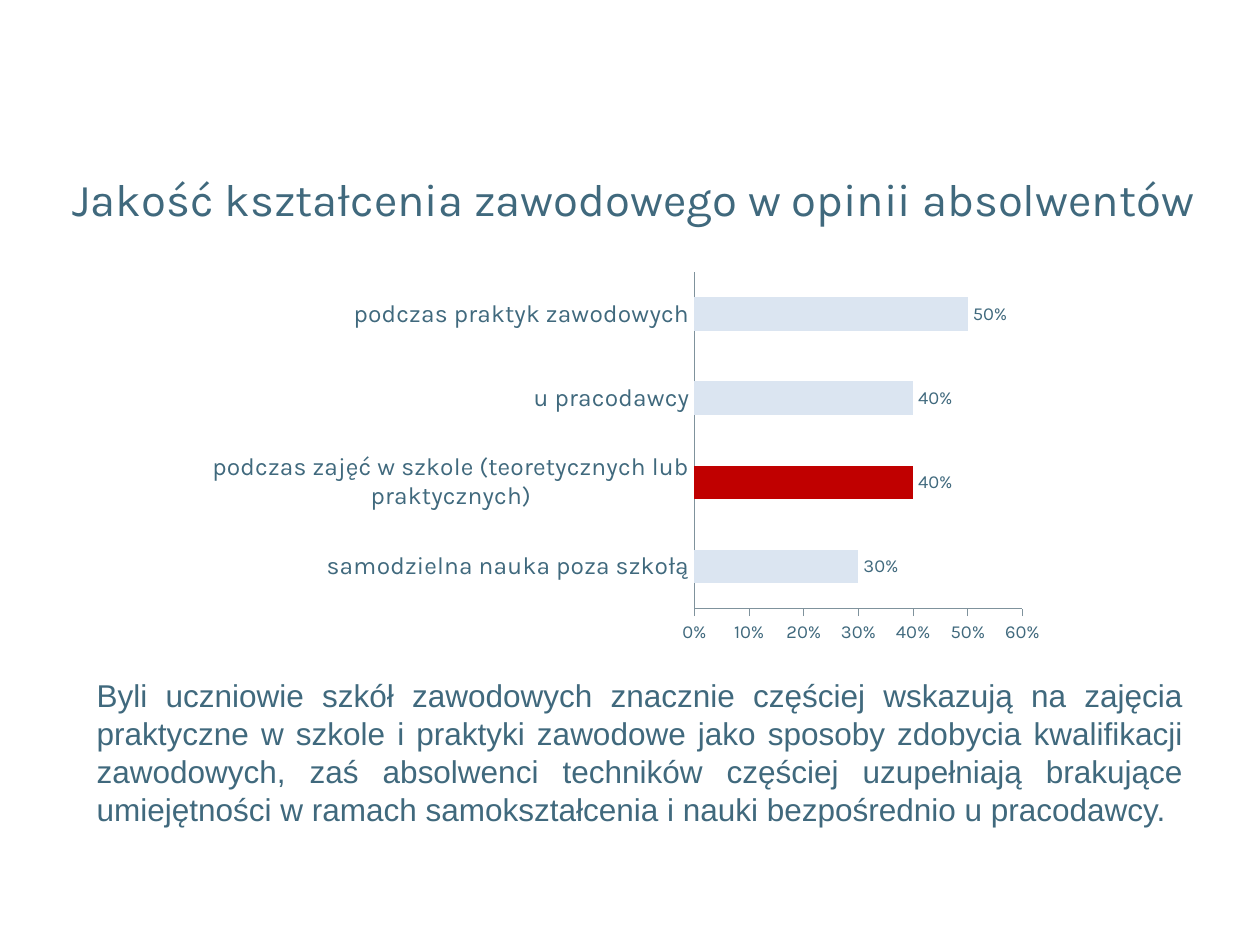
from lxml.etree import fromstring
from pptx import Presentation
from pptx.chart.data import CategoryChartData
from pptx.dml.color import RGBColor
from pptx.enum.chart import XL_CHART_TYPE, XL_LABEL_POSITION, XL_TICK_MARK
from pptx.enum.text import MSO_ANCHOR, MSO_AUTO_SIZE, PP_ALIGN
from pptx.util import Cm, Pt

INK = "40697D"
AXIS = "7F929C"
PALE = "DBE5F1"
RED = "C00000"

HEADING = "Jakość kształcenia zawodowego w opinii absolwentów"
COMMENTARY = (
    "Byli uczniowie szkół zawodowych znacznie częściej wskazują na zajęcia "
    "praktyczne w szkole i praktyki zawodowe jako sposoby zdobycia kwalifikacji "
    "zawodowych, zaś absolwenci techników częściej uzupełniają brakujące "
    "umiejętności w ramach samokształcenia i nauki bezpośrednio u pracodawcy."
)
LEARNING_PLACES = {
    "samodzielna nauka poza szkołą": 0.3,
    "podczas zajęć w szkole (teoretycznych lub praktycznych)": 0.4,
    "u pracodawcy": 0.4,
    "podczas praktyk zawodowych": 0.5,
}
SCHOOL_INDEX = 1
PLOT_AREA = {"x": 0.58, "y": 0.02, "w": 0.38, "h": 0.87}


def colour(value):
    """Turn a hex string into a colour."""
    return RGBColor.from_string(value)


def style_font(font, size, name="Karla", ink=INK):
    """Set size, typeface and colour of a font."""
    font.size = Pt(size)
    font.name = name
    font.bold = False
    font.color.rgb = colour(ink)


def write(frame, text, size, name="Karla", align=PP_ALIGN.LEFT, anchor=MSO_ANCHOR.TOP):
    """Fill a text frame with one formatted paragraph."""
    frame.word_wrap = True
    frame.vertical_anchor = anchor
    paragraph = frame.paragraphs[0]
    paragraph.alignment = align
    run = paragraph.add_run()
    run.text = text
    style_font(run.font, size, name)


def add_heading(slide):
    """Place the heading in the title placeholder."""
    heading = slide.shapes.title
    heading.left, heading.top = Cm(0.89), Cm(3.33)
    heading.width, heading.height = Cm(23.8), Cm(1.35)
    write(heading.text_frame, HEADING, 26, align=PP_ALIGN.CENTER, anchor=MSO_ANCHOR.BOTTOM)
    heading.text_frame.auto_size = MSO_AUTO_SIZE.NONE


def add_commentary(slide):
    """Add the justified commentary below the chart."""
    commentary = slide.shapes.add_textbox(Cm(1.7), Cm(13.51), Cm(22.4), Cm(3.33))
    write(commentary.text_frame, COMMENTARY, 18, name="Arial", align=PP_ALIGN.JUSTIFY)
    commentary.text_frame.auto_size = MSO_AUTO_SIZE.SHAPE_TO_FIT_TEXT


def style_axis(axis, size, tick):
    """Format an axis without gridlines."""
    axis.has_major_gridlines = False
    axis.major_tick_mark = tick
    axis.minor_tick_mark = XL_TICK_MARK.NONE
    axis.format.line.color.rgb = colour(AXIS)
    axis.format.line.width = Pt(0.75)
    style_font(axis.tick_labels.font, size)


def fix_plot_area(chart):
    """Give the inner plot area a fixed share of the chart."""
    plot_area = chart.plots[0]._element.getparent()
    for layout in plot_area.findall("{*}layout"):
        plot_area.remove(layout)
    shares = "".join(f'<c:{side} val="{share}"/>' for side, share in PLOT_AREA.items())
    plot_area.insert(0, fromstring(
        '<c:layout xmlns:c="http://schemas.openxmlformats.org/drawingml/2006/chart">'
        '<c:manualLayout><c:layoutTarget val="inner"/><c:xMode val="edge"/>'
        f'<c:yMode val="edge"/>{shares}</c:manualLayout></c:layout>'
    ))


def add_learning_chart(slide):
    """Add the bar chart of learning places with school lessons highlighted."""
    answers = CategoryChartData(number_format="0%")
    answers.categories = list(LEARNING_PLACES)
    answers.add_series("Series 1", list(LEARNING_PLACES.values()))
    chart = slide.shapes.add_chart(
        XL_CHART_TYPE.BAR_CLUSTERED, Cm(3.91), Cm(5.33), Cm(17.4), Cm(7.8), answers
    ).chart
    chart.has_title = False
    chart.has_legend = False
    style_font(chart.font, 10)
    style_axis(chart.category_axis, 14, XL_TICK_MARK.NONE)

    shares = chart.value_axis
    style_axis(shares, 10.5, XL_TICK_MARK.OUTSIDE)
    shares.minimum_scale, shares.maximum_scale, shares.major_unit = 0, 0.6, 0.1
    shares.tick_labels.number_format = "0%"
    shares.tick_labels.number_format_is_linked = False

    plot = chart.plots[0]
    plot.vary_by_categories = False
    plot.gap_width, plot.overlap = 150, -25
    bars = plot.series[0]
    for bar, fill_colour in ((bars, PALE), (bars.points[SCHOOL_INDEX], RED)):
        bar.format.fill.solid()
        bar.format.fill.fore_color.rgb = colour(fill_colour)

    labels = bars.data_labels
    labels.show_value = True
    labels.position = XL_LABEL_POSITION.OUTSIDE_END
    labels.number_format = "0%"
    labels.number_format_is_linked = False
    style_font(labels.font, 10.5)
    fix_plot_area(chart)


def main():
    """Build and save the slide."""
    presentation = Presentation()
    presentation.slide_width, presentation.slide_height = Cm(25.4), Cm(19.05)
    slide = presentation.slides.add_slide(presentation.slide_layouts[5])
    add_heading(slide)
    add_commentary(slide)
    add_learning_chart(slide)
    presentation.save("out.pptx")


if __name__ == "__main__":
    main()
